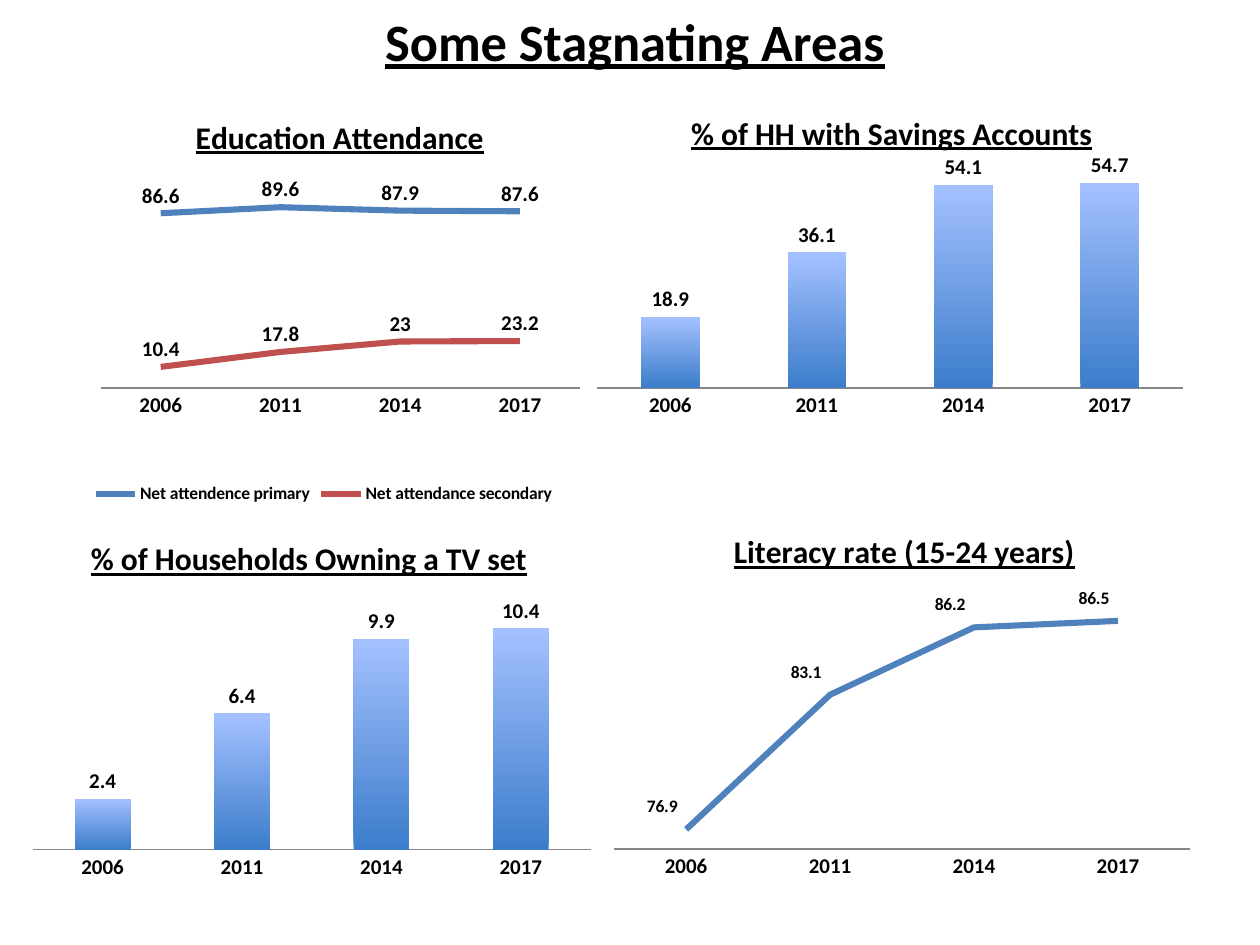
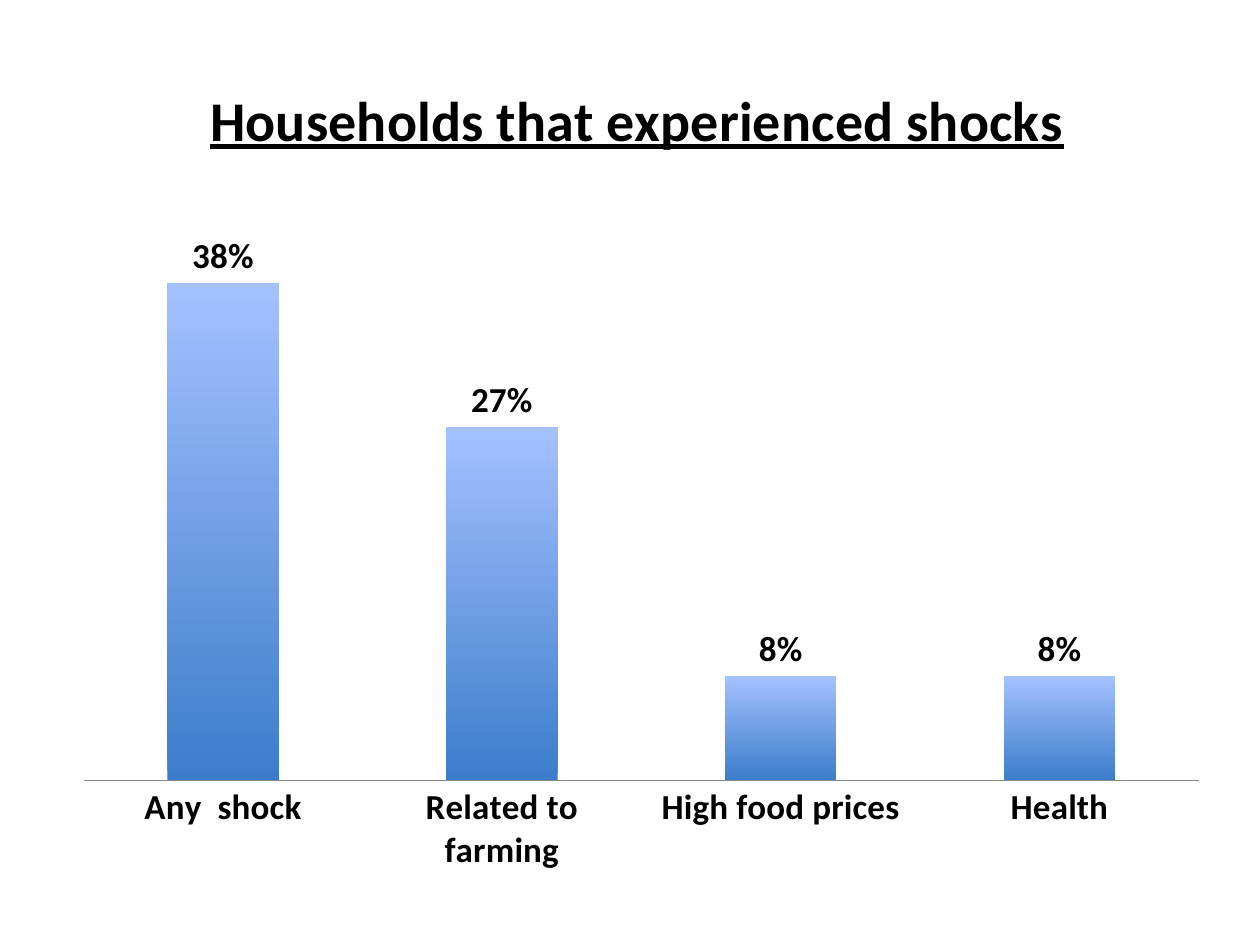
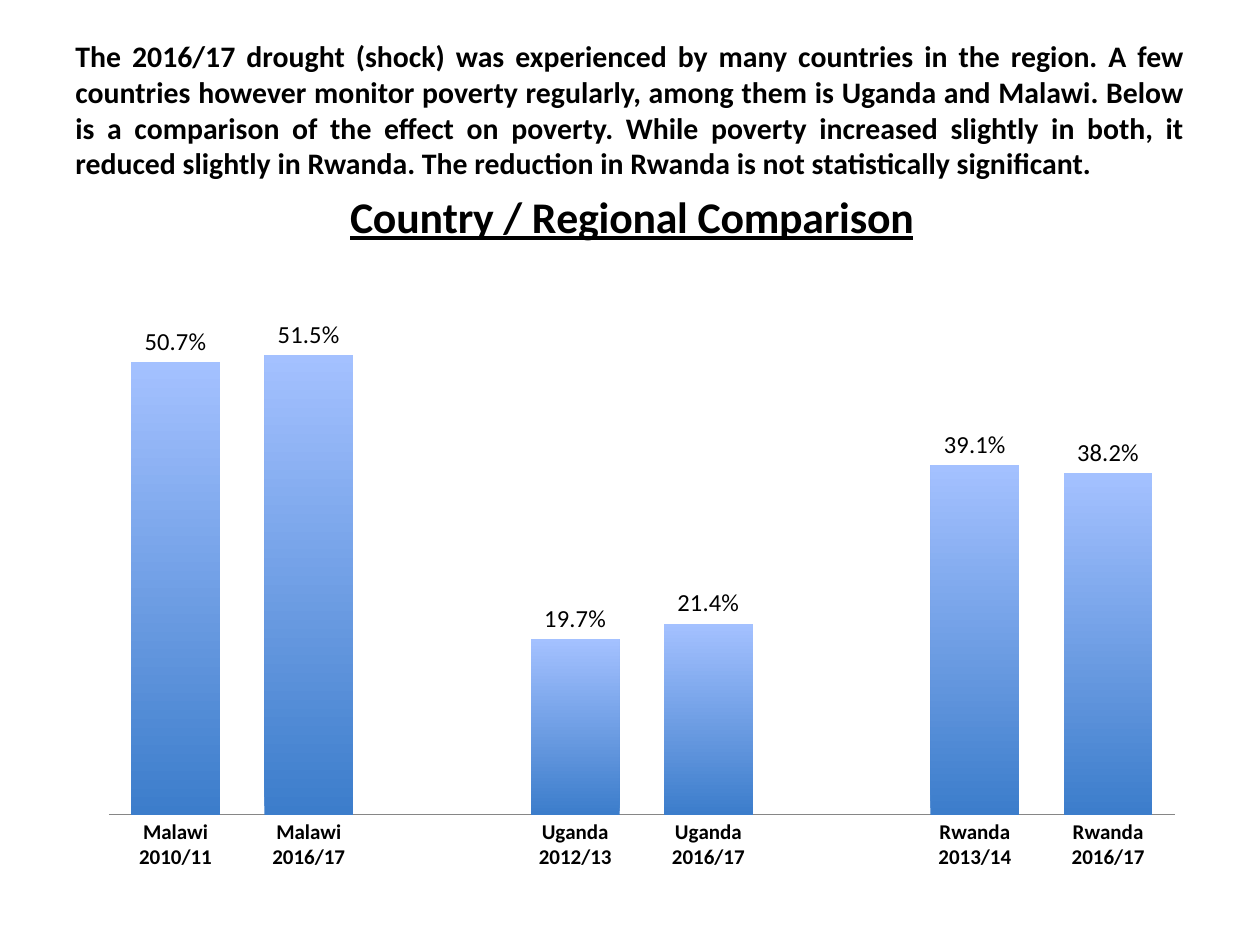
from lxml import etree
from pptx import Presentation
from pptx.chart.data import CategoryChartData
from pptx.dml.color import RGBColor
from pptx.enum.chart import XL_CHART_TYPE as ChartType
from pptx.enum.chart import XL_LABEL_POSITION as LabelPosition
from pptx.enum.chart import XL_LEGEND_POSITION as LegendPosition
from pptx.enum.chart import XL_TICK_MARK as TickMark
from pptx.enum.text import PP_ALIGN as Align
from pptx.oxml.ns import qn
from pptx.util import Cm, Pt

FONT = "Calibri"
BLACK = RGBColor(0x00, 0x00, 0x00)
AXIS_GREY = RGBColor(0x86, 0x86, 0x86)
BLUE = RGBColor(0x4F, 0x81, 0xBD)
RED = RGBColor(0xC0, 0x50, 0x4D)
BAR_BOTTOM = RGBColor(0x3C, 0x7D, 0xCB)
BAR_TOP = RGBColor(0xA4, 0xC1, 0xFF)

YEARS = ["2006", "2011", "2014", "2017"]


def style_font(font, size, bold=True, underline=None):
    font.name = FONT
    font.size = Pt(size)
    font.bold = bold
    font.underline = underline
    font.color.rgb = BLACK


def set_layout(parent, index, mode=None, target=None, **lengths):
    """Give a chart part a manual layout, in fractions of the chart."""
    for old in parent.findall(qn("c:layout")):
        parent.remove(old)
    layout = etree.Element(qn("c:layout"))
    manual = etree.SubElement(layout, qn("c:manualLayout"))
    settings = {"layoutTarget": target, "xMode": mode, "yMode": mode, **lengths}
    for tag, value in settings.items():
        if value is not None:
            etree.SubElement(manual, qn(f"c:{tag}")).set("val", str(value))
    parent.insert(index, layout)


def add_text(slide, box, text, size, align, underline=None):
    frame = slide.shapes.add_textbox(*map(Cm, box)).text_frame
    frame.word_wrap = True
    paragraph = frame.paragraphs[0]
    paragraph.text = text
    paragraph.alignment = align
    style_font(paragraph.font, size, underline=underline)


def add_trend(slide, kind, box, title, title_at, plot_at, categories, series,
              scale, title_size=18, axis_size=12):
    """Add a chart with an underlined title, a bare category axis and no value axis."""
    data = CategoryChartData()
    data.categories = categories
    for name, values in series:
        data.add_series(name, values)
    chart = slide.shapes.add_chart(kind, *map(Cm, box), data).chart
    style_font(chart.font, 10, bold=False)
    chart.has_legend = False

    chart.has_title = True
    heading = chart.chart_title.text_frame.paragraphs[0]
    heading.text = title
    style_font(heading.font, title_size, underline=True)
    chart_part = chart._chartSpace.xpath("c:chart")[0]
    x, y = title_at
    set_layout(chart_part.find(qn("c:title")), 1, "edge", x=x, y=y)
    x, y, w, h = plot_at
    set_layout(chart_part.find(qn("c:plotArea")), 0, "edge", "inner", x=x, y=y, w=w, h=h)

    values_axis, category_axis = chart.value_axis, chart.category_axis
    values_axis.minimum_scale, values_axis.maximum_scale = scale
    values_axis.has_major_gridlines = False
    values_axis.visible = False
    category_axis.has_major_gridlines = False
    category_axis.major_tick_mark = TickMark.NONE
    category_axis.format.line.color.rgb = AXIS_GREY
    category_axis.format.line.width = Pt(0.75)
    style_font(category_axis.tick_labels.font, axis_size)
    return chart


def show_values(series, position, size, bold=True, number_format="General"):
    labels = series.data_labels
    labels.show_value = True
    labels.position = position
    labels.number_format = number_format
    labels.number_format_is_linked = False
    style_font(labels.font, size, bold)


def add_columns(slide, *args, gap=150, overlap=-25, label_size=12, label_bold=True,
                number_format="General", **options):
    chart = add_trend(slide, ChartType.COLUMN_CLUSTERED, *args, **options)
    plot = chart.plots[0]
    plot.gap_width = gap
    plot.overlap = overlap
    plot.vary_by_categories = False
    bars = plot.series[0]
    fill = bars.format.fill
    fill.gradient()
    fill.gradient_angle = 90
    for stop, color in zip(fill.gradient_stops, (BAR_BOTTOM, BAR_TOP)):
        stop.color.rgb = color
    show_values(bars, LabelPosition.OUTSIDE_END, label_size, label_bold, number_format)


def add_lines(slide, *args, label_size=12, label_shift=None, **options):
    chart = add_trend(slide, ChartType.LINE, *args, **options)
    chart.plots[0].vary_by_categories = False
    for line, color in zip(chart.plots[0].series, (BLUE, RED)):
        line.smooth = False
        line.format.line.color.rgb = color
        line.format.line.width = Pt(3.5)
        show_values(line, LabelPosition.ABOVE, label_size)
        if label_shift:
            shift_labels(line, label_size, *label_shift)
    return chart


def shift_labels(line, size, dx, dy):
    """Move every label of a line by a fraction of the chart, without leader lines."""
    for index in range(len(line.values)):
        label = line.points[index].data_label
        label.position = LabelPosition.ABOVE
        style_font(label.font, size)
    for label in line._element.xpath("c:dLbls/c:dLbl"):
        set_layout(label, 1, x=dx, y=dy)
    for leader in line._element.xpath("c:dLbls/c:showLeaderLines"):
        leader.set("val", "0")


def stagnating_areas(slide):
    add_text(slide, (1.37, 0.05, 22.86, 1.6), "Some Stagnating Areas", 30,
             Align.CENTER, underline=True)
    attendance = add_lines(
        slide, (0.91, 2.13, 11.23, 8.13), "Education Attendance",
        (0.26, 0.01), (0.1, 0.2, 0.86, 0.5), YEARS,
        [("Net attendence primary", (86.6, 89.6, 87.9, 87.6)),
         ("Net attendance secondary", (10.4, 17.8, 23, 23.2))], (0, 100))
    attendance.has_legend = True
    attendance.legend.position = LegendPosition.BOTTOM
    attendance.legend.include_in_layout = False
    style_font(attendance.legend.font, 10)

    add_columns(slide, (11.53, 2.13, 12.7, 6.4), "% of HH with Savings Accounts",
                (0.18, 0), (0.04, 0.18, 0.93, 0.71), YEARS,
                [("Series 1", (18.9, 36.1, 54.1, 54.7))], (0, 60))
    add_lines(slide, (12.14, 10.26, 12.09, 7.62), "Literacy rate (15-24 years)",
              (0.21, 0.04), (0.02, 0.21, 0.96, 0.69), YEARS,
              [("Literacy rate (15-24 years)", (76.9, 83.1, 86.2, 86.5))], (76, 88),
              label_size=10, label_shift=(-0.04, -0.02))
    add_columns(slide, (0.43, 10.41, 11.71, 7.47), "% of Households Owning a TV set",
                (0.11, 0.04), (0.02, 0.21, 0.96, 0.69), YEARS,
                [("Series 1", (2.4, 6.4, 9.9, 10.4))], (0, 12))


def household_shocks(slide):
    add_columns(slide, (1.22, 0.91, 23.42, 17.04), "Households that experienced shocks",
                (0.12, 0.03), (0.02, 0.25, 0.96, 0.62),
                ["Any  shock", "Related to farming", "High food prices", "Health"],
                [("Series 1", (0.38, 0.27, 0.08, 0.08))], (0, 0.4),
                title_size=32, axis_size=20, label_size=20, number_format="0%")


def regional_comparison(slide):
    add_columns(slide, (1.75, 3.63, 22.38, 14.22), "Country / Regional Comparison",
                (0.23, 0), (0.02, 0.14, 0.96, 0.76),
                ["Malawi 2010/11", "Malawi 2016/17", "", "Uganda 2012/13",
                 "Uganda 2016/17", "", "Rwanda 2013/14", "Rwanda 2016/17"],
                [("Series 1", (50.7, 51.5, None, 19.7, 21.4, None, 39.1, 38.2))],
                (0, 60), title_size=25, gap=50, overlap=10,
                label_size=14, label_bold=False, number_format='0.0"%"')
    add_text(slide, (1.27, 0.64, 22.86, 2.82),
             "The 2016/17 drought (shock) was experienced by many countries in the "
             "region. A few countries however monitor poverty regularly, among them is "
             "Uganda and Malawi. Below is a comparison of the effect on poverty. While "
             "poverty increased slightly in both, it reduced slightly in Rwanda. The "
             "reduction in Rwanda is not statistically significant.",
             17, Align.JUSTIFY)


def main():
    deck = Presentation()
    deck.slide_width, deck.slide_height = Cm(25.4), Cm(19.05)
    for build in (stagnating_areas, household_shocks, regional_comparison):
        build(deck.slides.add_slide(deck.slide_layouts[6]))
    deck.save("out.pptx")


if __name__ == "__main__":
    main()
